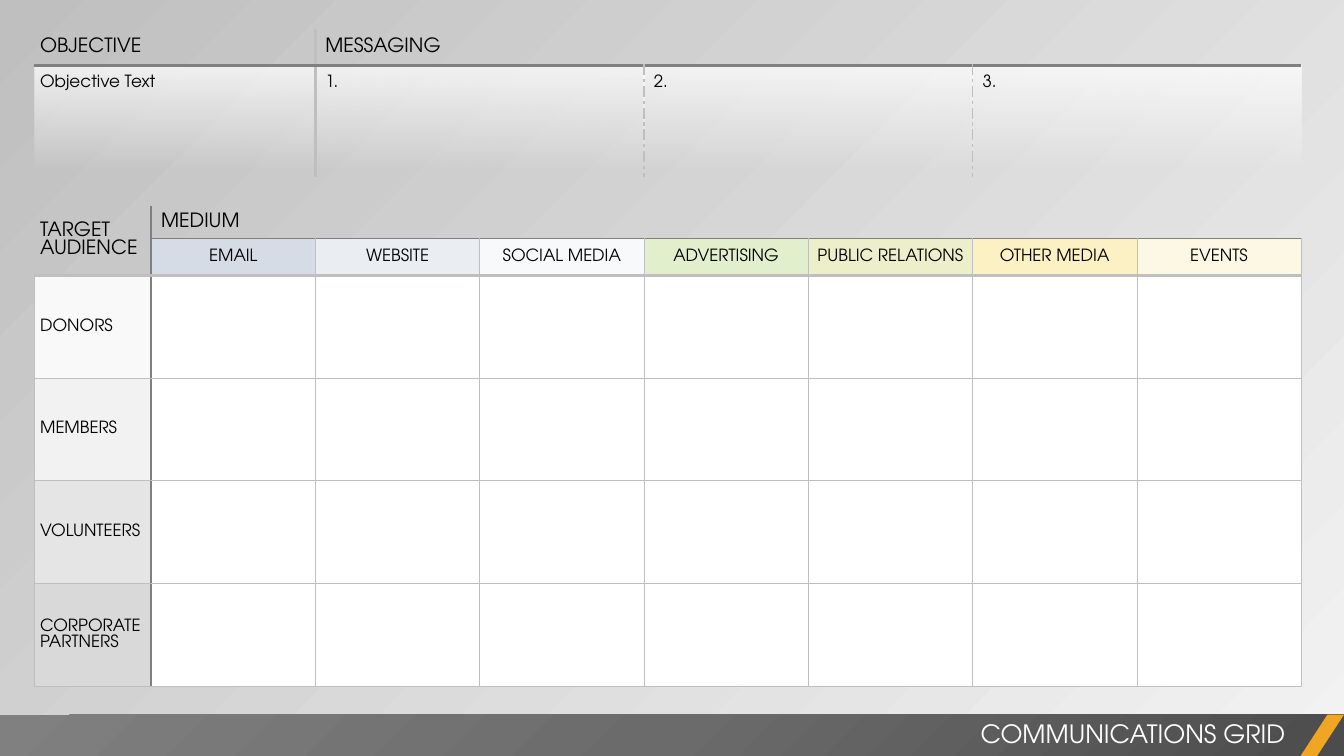
from lxml.etree import SubElement
from pptx import Presentation
from pptx.dml.color import RGBColor
from pptx.enum.shapes import MSO_SHAPE
from pptx.enum.text import MSO_ANCHOR, PP_ALIGN
from pptx.oxml.ns import qn
from pptx.util import Cm, Pt

FONT = "TeX Gyre Adventor"
BLACK = RGBColor(0x00, 0x00, 0x00)
WHITE = RGBColor(0xFF, 0xFF, 0xFF)
MIST = RGBColor(0xF2, 0xF2, 0xF2)
SILVER = RGBColor(0xBF, 0xBF, 0xBF)
GRAY = RGBColor(0x80, 0x80, 0x80)
SLATE = RGBColor(0x6B, 0x6B, 0x6B)
CHARCOAL = RGBColor(0x4C, 0x4C, 0x4C)
ORANGE = RGBColor(0xF0, 0xA6, 0x22)
MEDIA = [
    ("EMAIL", RGBColor(0xD6, 0xDC, 0xE5)),
    ("WEBSITE", RGBColor(0xEA, 0xEE, 0xF3)),
    ("SOCIAL MEDIA", RGBColor(0xF7, 0xF9, 0xFB)),
    ("ADVERTISING", RGBColor(0xE2, 0xEF, 0xCD)),
    ("PUBLIC RELATIONS", RGBColor(0xED, 0xEF, 0xCB)),
    ("OTHER MEDIA", RGBColor(0xFC, 0xF1, 0xC3)),
    ("EVENTS", RGBColor(0xFC, 0xF8, 0xE4)),
]
AUDIENCES = [
    ("DONORS", RGBColor(0xF9, 0xF9, 0xF9)),
    ("MEMBERS", MIST),
    ("VOLUNTEERS", RGBColor(0xE5, 0xE5, 0xE5)),
    ("CORPORATE PARTNERS", RGBColor(0xD9, 0xD9, 0xD9)),
]
THIN = (SILVER, 0.5, "solid")
DASHED = (SILVER, 1, "sysDashDot")
HEAVY = (SILVER, 2.25, "solid")
RULE = (GRAY, 1, "solid")
DIVIDER = (GRAY, 1.5, "solid")
BASELINE = (GRAY, 2.25, "solid")
FADE = [(0, WHITE, 75), (93, WHITE, 0)]
PLAIN_TABLE = "{2D5ABB26-0587-4C30-8999-92F81FD0307C}"


def add_gradient(parent, stops, angle=None):
    """Append a gradient fill, linear at an angle or circular from the lower right."""
    gradient = SubElement(parent, qn("a:gradFill"), rotWithShape="1")
    stop_list = SubElement(gradient, qn("a:gsLst"))
    for position, color, opacity in stops:
        stop = SubElement(stop_list, qn("a:gs"), pos=str(position * 1000))
        tint = SubElement(stop, qn("a:srgbClr"), val=str(color))
        if opacity < 100:
            SubElement(tint, qn("a:alpha"), val=str(opacity * 1000))
    if angle is None:
        circle = SubElement(gradient, qn("a:path"))
        circle.set("path", "circle")
        SubElement(circle, qn("a:fillToRect"), l="100000", t="100000")
    else:
        SubElement(gradient, qn("a:lin"), ang=str(angle * 60000), scaled="0")
    return gradient


def set_borders(cell, left, right, top, bottom):
    """Draw the given edges of a cell; None leaves an edge empty."""
    properties = cell._tc.get_or_add_tcPr()
    for side, edge in zip("LRTB", (left, right, top, bottom)):
        if edge is None:
            line = SubElement(properties, qn(f"a:ln{side}"), w="0")
            SubElement(line, qn("a:noFill"))
            continue
        color, width, dash = edge
        line = SubElement(properties, qn(f"a:ln{side}"), w=str(Pt(width)))
        fill = SubElement(line, qn("a:solidFill"))
        SubElement(fill, qn("a:srgbClr"), val=str(color))
        SubElement(line, qn("a:prstDash"), val=dash)


def style_text(frame, size, color, align=PP_ALIGN.LEFT):
    """Format all the text of a frame."""
    for para in frame.paragraphs:
        para.alignment = align
        for span in para.runs:
            span.font.name = FONT
            span.font.size = Pt(size)
            span.font.color.rgb = color


def fill_cell(cell, text, size, indent=0.15, top=0, align=PP_ALIGN.LEFT):
    """Write text in a cell with the given margins."""
    cell.margin_left, cell.margin_top = Cm(indent), Cm(top)
    cell.margin_right = cell.margin_bottom = 0
    cell.vertical_anchor = MSO_ANCHOR.TOP if top else MSO_ANCHOR.MIDDLE
    cell.text_frame.text = text
    style_text(cell.text_frame, size, BLACK, align)


def add_plain_table(page, left, top, widths, heights):
    """Add an unstyled table with the given column widths and row heights."""
    frame = page.shapes.add_table(len(heights), len(widths), Cm(left), Cm(top),
                                  Cm(sum(widths)), Cm(sum(heights)))
    table = frame.table
    table.first_row = table.horz_banding = False
    table._tbl.tblPr.find(qn("a:tableStyleId")).text = PLAIN_TABLE
    for column, width in zip(table.columns, widths):
        column.width = Cm(width)
    for row, height in zip(table.rows, heights):
        row.height = Cm(height)
    return table


def add_audience_grid(page, left, top):
    """Place the grid of audiences against media."""
    widths = [2.95] + [4.14] * len(MEDIA)
    heights = [0.84, 0.86] + [2.59] * len(AUDIENCES)
    table = add_plain_table(page, left, top, widths, heights)
    row_edges = [None, RULE, HEAVY] + [THIN] * len(AUDIENCES)
    for row in range(len(heights)):
        for column in range(len(widths)):
            cell = table.cell(row, column)
            inner = THIN if row else None
            outer = THIN if row > 1 else None
            corner = column == 0
            set_borders(
                cell,
                outer if corner else DIVIDER if column == 1 else inner,
                DIVIDER if corner else inner,
                None if corner and row == 1 else row_edges[row],
                None if corner and row == 0 else row_edges[row + 1],
            )
            fill_cell(cell, "", 12)
            if row > 1 and column:
                cell.fill.solid()
                cell.fill.fore_color.rgb = WHITE
    table.cell(0, 0).merge(table.cell(1, 0))
    table.cell(0, 1).merge(table.cell(0, len(MEDIA)))
    fill_cell(table.cell(0, 0), "TARGET AUDIENCE", 14)
    fill_cell(table.cell(0, 1), "MEDIUM", 14, 0.25)
    for column, (medium, color) in enumerate(MEDIA, 1):
        cell = table.cell(1, column)
        fill_cell(cell, medium, 12, 0, align=PP_ALIGN.CENTER)
        cell.fill.solid()
        cell.fill.fore_color.rgb = color
    for row, (audience, color) in enumerate(AUDIENCES, 2):
        cell = table.cell(row, 0)
        fill_cell(cell, audience, 12)
        cell.fill.solid()
        cell.fill.fore_color.rgb = color


def add_messaging(page, left, top):
    """Place the objective and its three messages."""
    table = add_plain_table(page, left, top, [7.09] + [8.28] * 3, [0.91, 2.82])
    column_edges = [None, HEAVY, DASHED, DASHED, None]
    for column, text in enumerate(["Objective Text", "1.", "2.", "3."]):
        indent = 0.25 if column else 0.15
        before, after = column_edges[column:column + 2]
        heading, body = table.cell(0, column), table.cell(1, column)
        set_borders(heading, HEAVY if column == 1 else None,
                    None if column else HEAVY, None, BASELINE)
        set_borders(body, before, after, BASELINE, None)
        fill_cell(heading, "", 14)
        fill_cell(body, text, 12, indent, 0.25)
        add_gradient(body._tc.tcPr, FADE, 90)
    table.cell(0, 1).merge(table.cell(0, 3))
    fill_cell(table.cell(0, 0), "OBJECTIVE", 14)
    fill_cell(table.cell(0, 1), "MESSAGING", 14, 0.25)


def add_footer(page, left, top, width, height):
    """Place the title band with its slanted accent."""
    accent_width = 1.1
    band = page.shapes.add_shape(MSO_SHAPE.RECTANGLE, Cm(left), Cm(top), Cm(width), Cm(height))
    accent = page.shapes.add_shape(MSO_SHAPE.PARALLELOGRAM, Cm(left + width - accent_width),
                                   Cm(top), Cm(accent_width), Cm(height))
    accent.adjustments[0] = 0.65
    for shape in (band, accent):
        shape.shadow.inherit = False
        shape.line.fill.background()
        shape.fill.solid()
        shape.fill.fore_color.rgb = ORANGE
    properties = band._element.spPr
    shade = add_gradient(properties, [(0, CHARCOAL, 100), (50, SLATE, 100), (100, GRAY, 100)])
    properties.replace(properties.find(qn("a:solidFill")), shade)
    title = page.shapes.add_textbox(Cm(left + width - 20.53), Cm(top - 0.03), Cm(19.3), Cm(1.02))
    title.text_frame.word_wrap = True
    title.text_frame.text = "COMMUNICATIONS GRID"
    style_text(title.text_frame, 18, WHITE, PP_ALIGN.RIGHT)


def set_background(page):
    """Shade the page from light at the lower right to silver at the upper left."""
    page.background.fill.solid()
    properties = page.element.find(".//" + qn("p:bgPr"))
    shade = add_gradient(properties, [(0, MIST, 40), (100, SILVER, 100)], 225)
    properties.replace(properties.find(qn("a:solidFill")), shade)


def main():
    """Build the communications grid slide."""
    deck = Presentation()
    deck.slide_width, deck.slide_height = Cm(33.87), Cm(19.05)
    page = deck.slides.add_slide(deck.slide_layouts[6])
    set_background(page)
    add_audience_grid(page, 0.86, 5.18)
    add_footer(page, 0, 18.01, 33.87, 1.05)
    add_messaging(page, 0.86, 0.74)
    deck.save("out.pptx")


if __name__ == "__main__":
    main()
